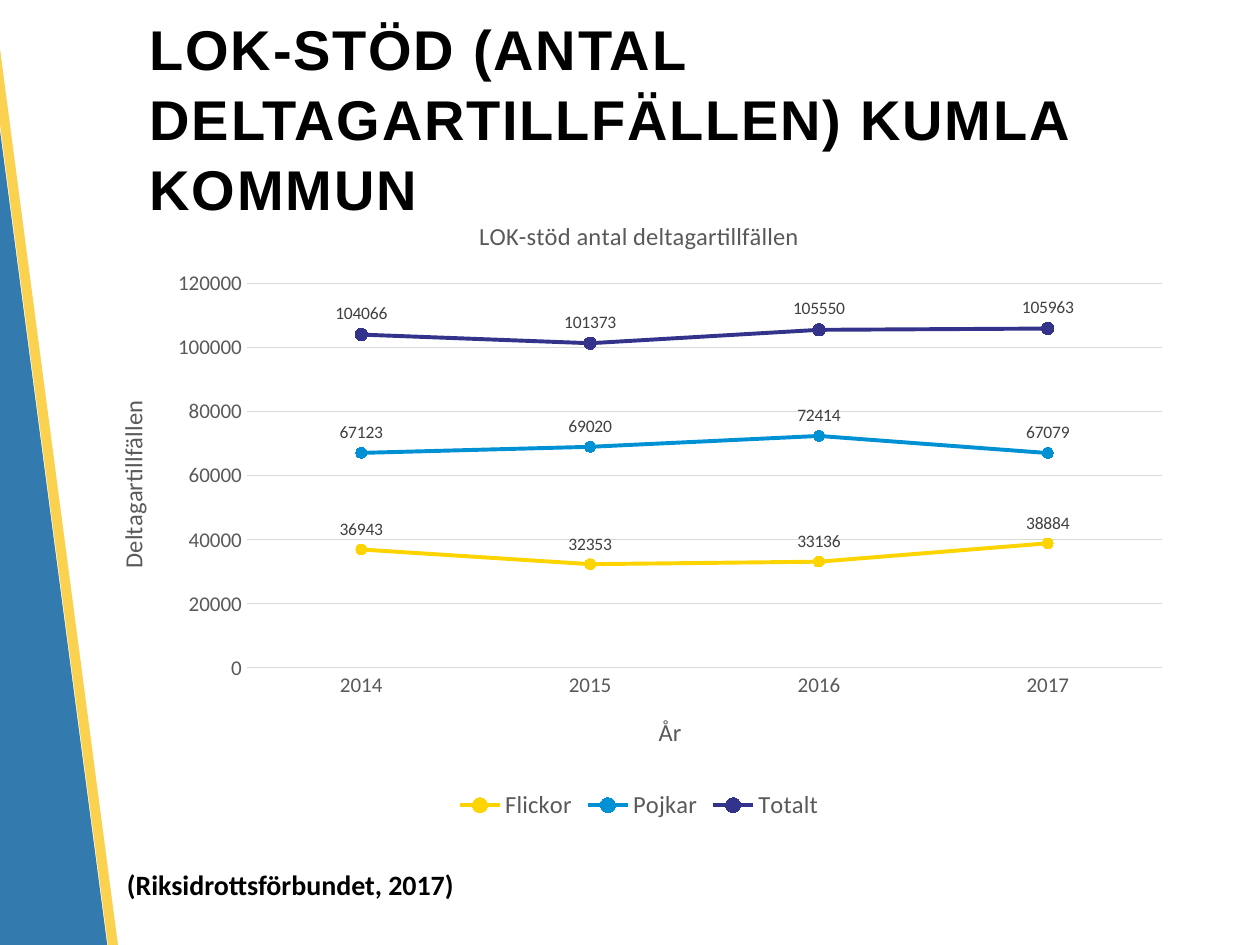
from lxml import etree
from pptx import Presentation
from pptx.chart.data import CategoryChartData
from pptx.dml.color import RGBColor
from pptx.enum.chart import XL_CHART_TYPE as ChartType, XL_LABEL_POSITION as LabelPosition
from pptx.enum.chart import XL_LEGEND_POSITION as LegendPosition, XL_MARKER_STYLE as Marker
from pptx.enum.chart import XL_TICK_MARK as TickMark
from pptx.enum.shapes import MSO_SHAPE as Shape
from pptx.enum.text import MSO_ANCHOR as Anchor
from pptx.oxml import parse_xml
from pptx.oxml.ns import nsdecls, qn
from pptx.util import Cm, Pt

COLORS = {
    "black": "000000", "gray": "595959", "label": "404040", "grid": "D9D9D9",
    "blue_band": "005B9C", "yellow_band": "FAC828",
    "girls": "FDD400", "boys": "0090D4", "total": "33338B",
}
TITLE = "LOK-STÖD (ANTAL DELTAGARTILLFÄLLEN) KUMLA KOMMUN"
SOURCE = "(Riksidrottsförbundet, 2017)"
CHART_TITLE = "LOK-stöd antal deltagartillfällen"
YEAR_TITLE = "År"
COUNT_TITLE = "Deltagartillfällen"
YEARS = ["2014", "2015", "2016", "2017"]
SERIES = [
    ("Flickor", "girls", 6, [36943, 32353, 33136, 38884]),
    ("Pojkar", "boys", 6, [67123, 69020, 72414, 67079]),
    ("Totalt", "total", 7, [104066, 101373, 105550, 105963]),
]
BANDS = [
    ("blue_band", 80, (-1.32, -4.17, 2.31, 28.78)),
    ("yellow_band", 81, (0.97, -4.5, 0.2, 28.75)),
]
BAND_ANGLE = -7.5
PLOT_AREA = {"x": 0.14, "y": 0.14, "w": 0.84, "h": 0.61}


def color(name):
    return RGBColor.from_string(COLORS[name])


def style_font(font, size, name, face="Calibri", bold=False):
    font.size, font.name, font.bold = Pt(size), face, bold
    font.color.rgb = color(name)


def add_band(slide, name, opacity, place):
    band = slide.shapes.add_shape(Shape.RECTANGLE, *map(Cm, place))
    band.rotation = BAND_ANGLE
    band.shadow.inherit = False
    band.line.fill.background()
    band.fill.solid()
    band.fill.fore_color.rgb = color(name)
    fill = band.fill._xPr.find(qn("a:solidFill"))[0]
    etree.SubElement(fill, qn("a:alpha"), val=str(opacity * 1000))


def add_text(slide, text, place, size, face, wrap):
    box = slide.shapes.add_textbox(*map(Cm, place))
    box.text_frame.word_wrap = wrap
    para = box.text_frame.paragraphs[0]
    span = para.add_run()
    span.text = text
    style_font(span.font, size, "black", face, True)
    return box.text_frame, para, span


def add_caption(owner, text):
    para = owner.text_frame.paragraphs[0]
    span = para.add_run()
    span.text = text
    style_font(span.font, 14, "gray")


def style_axis(axis, title):
    axis.major_tick_mark = axis.minor_tick_mark = TickMark.NONE
    style_font(axis.tick_labels.font, 12, "gray")
    add_caption(axis.axis_title, title)


def style_line(line, name, width):
    line.color.rgb = color(name)
    line.width = Pt(width)


def style_series(series, name, size):
    series.smooth = False
    style_line(series.format.line, name, 2.25)
    marker = series.marker
    marker.style, marker.size = Marker.CIRCLE, size
    marker.format.fill.solid()
    marker.format.fill.fore_color.rgb = color(name)
    marker.format.line.color.rgb = color(name)
    labels = series.data_labels
    labels.show_value = True
    labels.position = LabelPosition.ABOVE
    style_font(labels.font, 10, "label")


def place_plot(chart):
    plot_area = chart._chartSpace.chart.plotArea
    for old in plot_area.findall(qn("c:layout")):
        plot_area.remove(old)
    sizes = "".join(f'<c:{key} val="{value}"/>' for key, value in PLOT_AREA.items())
    plot_area.insert(0, parse_xml(
        f'<c:layout {nsdecls("c")}><c:manualLayout><c:layoutTarget val="inner"/>'
        f'<c:xMode val="edge"/><c:yMode val="edge"/>{sizes}</c:manualLayout></c:layout>'))


def add_line_chart(slide):
    data = CategoryChartData(number_format="General")
    data.categories = YEARS
    for name, _, _, values in SERIES:
        data.add_series(name, values)
    place = map(Cm, (1.9, 3.94, 21.97, 12.7))
    chart = slide.shapes.add_chart(ChartType.LINE_MARKERS, *place, data).chart
    style_font(chart.font, 10, "black")
    chart.has_title = True
    add_caption(chart.chart_title, CHART_TITLE)
    chart.chart_title.include_in_layout = False
    chart.has_legend = True
    chart.legend.position = LegendPosition.BOTTOM
    chart.legend.include_in_layout = False
    style_font(chart.legend.font, 14, "gray")

    style_axis(chart.category_axis, YEAR_TITLE)
    style_line(chart.category_axis.format.line, "grid", 0.75)
    counts = chart.value_axis
    style_axis(counts, COUNT_TITLE)
    counts.minimum_scale, counts.maximum_scale, counts.major_unit = 0, 120000, 20000
    counts.format.line.fill.background()
    style_line(counts.major_gridlines.format.line, "grid", 0.75)

    plot = chart.plots[0]
    plot.vary_by_categories = False
    for series, (_, name, size, _) in zip(plot.series, SERIES):
        style_series(series, name, size)
    place_plot(chart)


def main():
    deck = Presentation()
    deck.slide_width, deck.slide_height = Cm(25.4), Cm(19.05)
    slide = deck.slides.add_slide(deck.slide_layouts[6])
    for band in BANDS:
        add_band(slide, *band)
    frame, para, span = add_text(slide, TITLE, (2.77, 0.76, 21.54, 3.18), 32, "Arial", True)
    frame.vertical_anchor = Anchor.MIDDLE
    para.line_spacing = 1.04
    span.font._element.set("spc", "100")
    add_text(slide, SOURCE, (2.31, 17.37, 7.21, 0.94), 16, "Calibri", False)
    add_line_chart(slide)
    deck.save("out.pptx")


if __name__ == "__main__":
    main()
